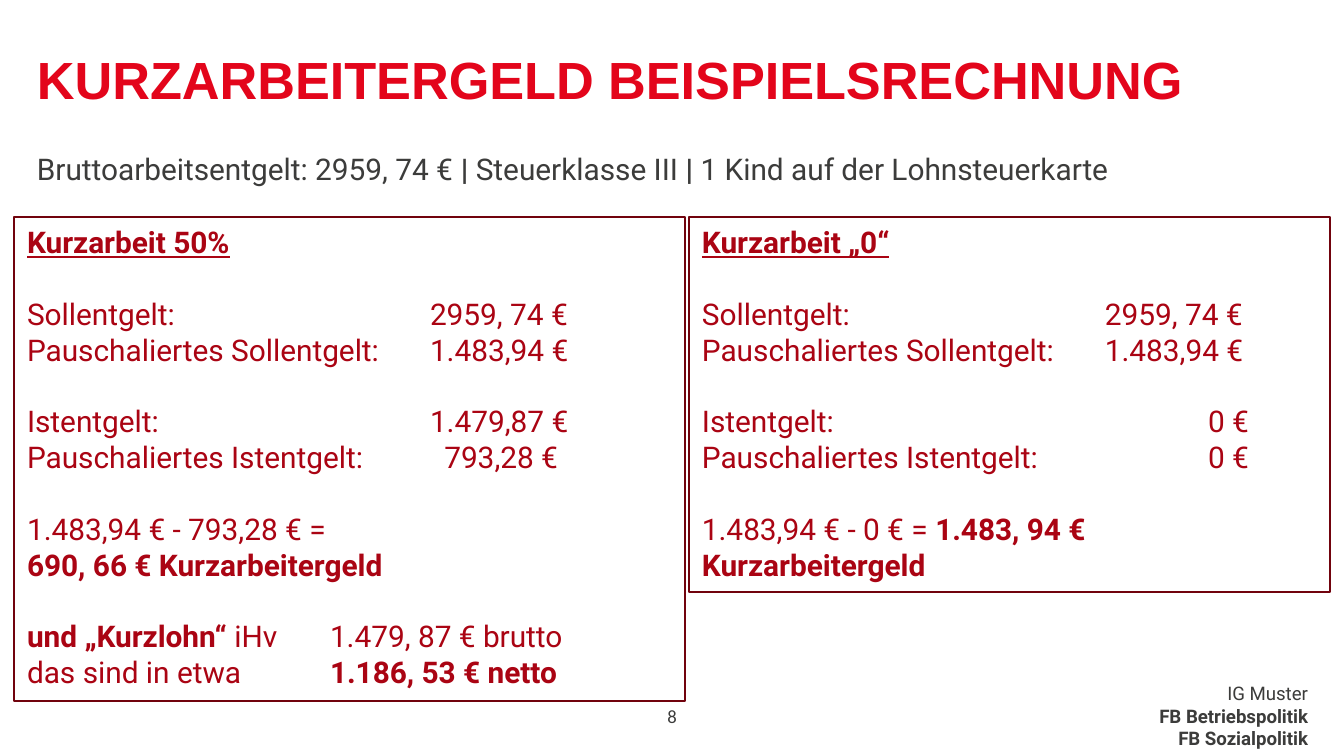
import pptx
import pptx.dml.color
import pptx.enum.shapes
import pptx.enum.text
import pptx.oxml.ns
import pptx.util
from lxml import etree

EMU_PER_PX = 914400 / 134.4
RED, DARK_RED, BORDER, GREY = "E3051B", "AA0413", "71030D", "3C3C3B"
ALIGN = pptx.enum.text.PP_ALIGN
ANCHOR = pptx.enum.text.MSO_ANCHOR

# A paragraph is a list of (text, style); style holds b for bold, u for underlined.
TITLE = [[("KURZARBEITERGELD BEISPIELSRECHNUNG", "b")]]
SUBTITLE = [[("Bruttoarbeitsentgelt: 2959, 74 € ", ""), ("| ", "b"),
             ("Steuerklasse III", ""), (" | ", "b"),
             ("1 Kind auf der Lohnsteuerkarte", "")]]
FOOTER = [[("IG Muster", "")], [("FB Betriebspolitik", "b")], [("FB Sozialpolitik", "b")]]
PAGE_NUMBER = [[("8", "")]]

# Tab stops: distance from the text edge in px and alignment
AMOUNT, SHORT_AMOUNT, ZERO, WAGE = (403, "l"), (531, "r"), (547, "r"), (303, "l")

# Each panel: box in px, then blocks of (tab stop, paragraph)
PANELS = [
    ((689, 217, 641, 375), [
        [(None, [("Kurzarbeit „0“", "bu")])],
        [(AMOUNT, [("Sollentgelt:\t2959, 74 €", "")]),
         (AMOUNT, [("Pauschaliertes Sollentgelt:\t1.483,94 €", "")])],
        [(ZERO, [("Istentgelt:\t0 €", "")]),
         (ZERO, [("Pauschaliertes Istentgelt:\t0 €", "")])],
        [(None, [("1.483,94 € - 0 € = ", ""), ("1.483, 94 € Kurzarbeitergeld", "b")])],
    ]),
    ((14, 217, 671, 484), [
        [(None, [("Kurzarbeit 50%", "bu")])],
        [(AMOUNT, [("Sollentgelt:\t2959, 74 €", "")]),
         (AMOUNT, [("Pauschaliertes Sollentgelt:\t1.483,94 €", "")])],
        [(AMOUNT, [("Istentgelt:\t1.479,87 €", "")]),
         (SHORT_AMOUNT, [("Pauschaliertes Istentgelt:\t793,28 €", "")])],
        [(None, [("1.483,94 € - 793,28 € =", "")]),
         (None, [("690, 66 € Kurzarbeitergeld", "b")])],
        [(WAGE, [("und „Kurzlohn“", "b"), (" iHv\t1.479, 87 € brutto", "")]),
         (WAGE, [("das sind in etwa", ""), ("\t1.186, 53 € netto", "b")])],
    ]),
]


def px(length):
    return pptx.util.Emu(round(length * EMU_PER_PX))


def rgb(color):
    return pptx.dml.color.RGBColor.from_string(color)


def set_margins(frame, left, top, right, bottom):
    frame.margin_left, frame.margin_top = px(left), px(top)
    frame.margin_right, frame.margin_bottom = px(right), px(bottom)


def add_tab_stop(paragraph, stop):
    position, alignment = stop
    properties = paragraph._p.get_or_add_pPr()
    tab_list = etree.SubElement(properties, pptx.oxml.ns.qn("a:tabLst"))
    etree.SubElement(tab_list, pptx.oxml.ns.qn("a:tab"), pos=str(px(position)), algn=alignment)


def add_runs(paragraph, runs, size, color, font):
    for text, style in runs:
        run = paragraph.add_run()
        run.text = text
        run.font.name, run.font.size = font, pptx.util.Pt(size)
        run.font.bold, run.font.underline = "b" in style, "u" in style
        run.font.color.rgb = rgb(color)


def next_paragraph(frame, index):
    return frame.paragraphs[0] if index == 0 else frame.add_paragraph()


def add_text(slide, box, paragraphs, size, color, font, align=ALIGN.LEFT,
             anchor=ANCHOR.TOP, line_spacing=1.0):
    frame = slide.shapes.add_textbox(*map(px, box)).text_frame
    frame.word_wrap = True
    frame.vertical_anchor = anchor
    set_margins(frame, 0, 0, 0, 0)
    for index, runs in enumerate(paragraphs):
        paragraph = next_paragraph(frame, index)
        paragraph.alignment = align
        paragraph.line_spacing = line_spacing
        add_runs(paragraph, runs, size, color, font)


def add_panel(slide, box, blocks):
    """Draw a bordered calculation; blocks are set one line apart."""
    shape = slide.shapes.add_shape(pptx.enum.shapes.MSO_SHAPE.RECTANGLE, *map(px, box))
    shape.shadow.inherit = False
    shape.fill.background()
    shape.line.color.rgb = rgb(BORDER)
    shape.line.width = pptx.util.Pt(0.75)
    frame = shape.text_frame
    frame.word_wrap = True
    frame.vertical_anchor = ANCHOR.TOP
    set_margins(frame, 13, 7, 20, 7)
    lines = [(row == 0, stop, runs) for block in blocks
             for row, (stop, runs) in enumerate(block)]
    for index, (starts_block, stop, runs) in enumerate(lines):
        paragraph = next_paragraph(frame, index)
        if stop:
            add_tab_stop(paragraph, stop)
        paragraph.alignment = ALIGN.LEFT
        if starts_block and index > 0:
            paragraph.space_before = pptx.util.Pt(19.2)
        add_runs(paragraph, runs, 16, DARK_RED, "Roboto")


def main():
    presentation = pptx.Presentation()
    presentation.slide_width, presentation.slide_height = px(1344), px(756)
    slide = presentation.slides.add_slide(presentation.slide_layouts[6])
    add_text(slide, (899, 682, 409, 67), FOOTER, 10, GREY, "Roboto", align=ALIGN.RIGHT)
    add_text(slide, (607, 688, 130, 40), PAGE_NUMBER, 10, GREY, "Calibri",
             align=ALIGN.CENTER, anchor=ANCHOR.BOTTOM, line_spacing=0.9)
    add_text(slide, (37, 54, 1270, 67), TITLE, 28, RED, "Arial", line_spacing=0.9)
    add_text(slide, (37, 155, 1270, 40), SUBTITLE, 16, GREY, "Roboto", line_spacing=0.9)
    for box, blocks in PANELS:
        add_panel(slide, box, blocks)
    presentation.save("out.pptx")


if __name__ == "__main__":
    main()
